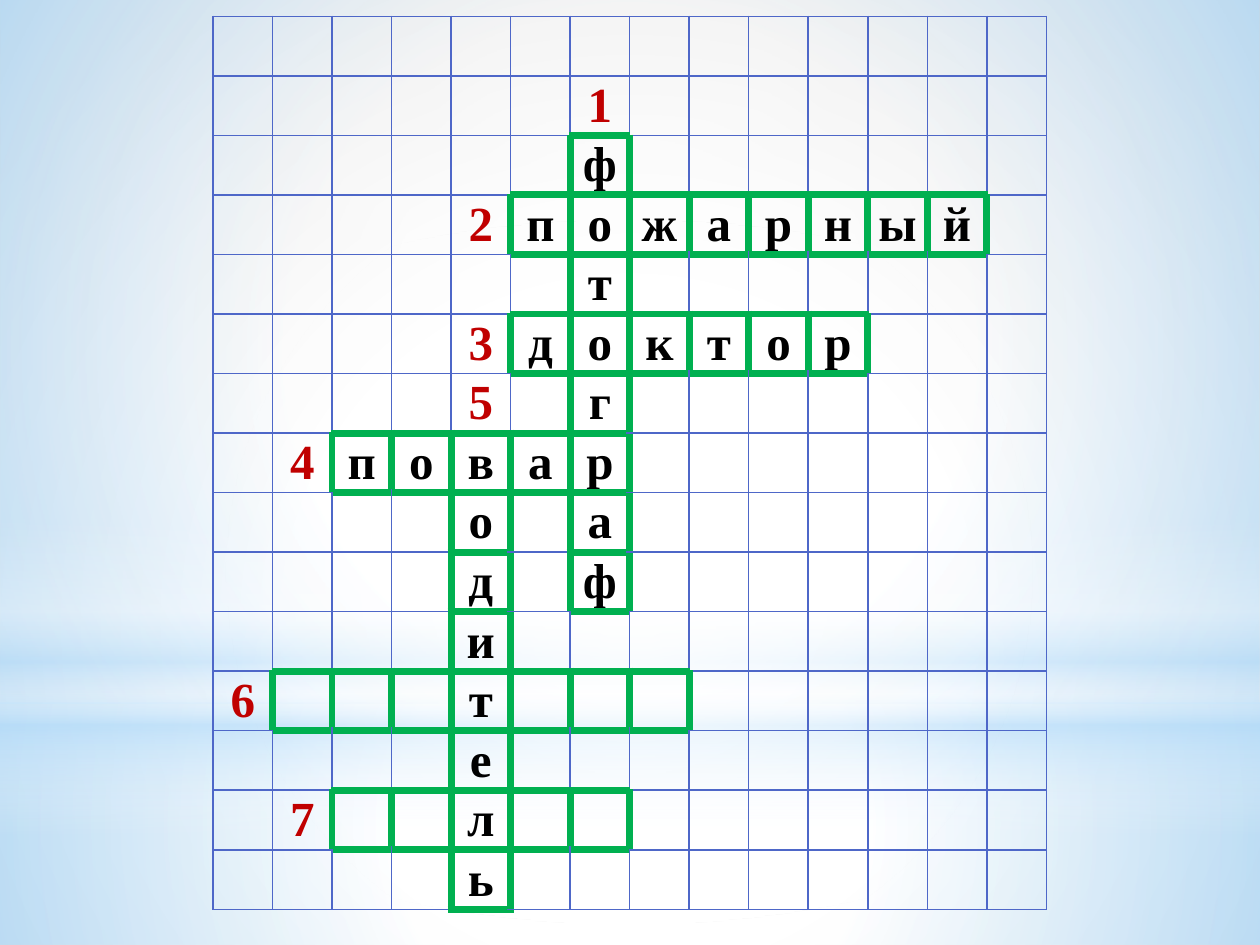
from dataclasses import dataclass

import lxml.etree
import pptx
import pptx.dml.color
import pptx.enum.shapes
import pptx.enum.text
import pptx.oxml.ns
import pptx.util

SLIDE_WIDTH, SLIDE_HEIGHT = 10, 7.5
COLUMNS, ROWS, CELL = 14, 15, 0.4725
TABLE_LEFT, TABLE_TOP = 1.69, 0.13
THIN, THICK = 1, 4.5
FONT, FONT_SIZE = "Times New Roman", 28
COLORS = {"white": "FFFFFF", "gray": "D1D1D1", "sky": "B4DCFA", "grid": "4E67C8",
          "word": "00B050", "number": "C00000", "letter": "000000"}
ACROSS, DOWN = (0, 1), (1, 0)
SIDES = {"lnL": (0, -1), "lnR": (0, 1), "lnT": (-1, 0), "lnB": (1, 0)}
SHAPES = pptx.enum.shapes.MSO_SHAPE


@dataclass
class Word:
    """A crossword entry; its number stands just before the first cell."""
    number: int
    row: int
    column: int
    step: tuple[int, int]
    length: int
    letters: str = ""

    def cell(self, index: int) -> tuple[int, int]:
        return self.row + index * self.step[0], self.column + index * self.step[1]


@dataclass
class Gradient:
    """Stops are (position, colour, opacity) in percent; center is left, top, right, bottom."""
    stops: list[tuple[int, str, int]]
    center: tuple[int, int, int, int] | None = (50, 50, 50, 50)


@dataclass
class Backdrop:
    """A full-width shape; top and height are shares of the slide height."""
    kind: SHAPES
    top: float
    height: float
    gradient: Gradient


WORDS = [
    Word(1, 2, 6, DOWN, 8, "фотограф"),
    Word(2, 3, 5, ACROSS, 8, "пожарный"),
    Word(3, 5, 5, ACROSS, 6, "доктор"),
    Word(4, 7, 2, ACROSS, 5, "повар"),
    Word(5, 7, 4, DOWN, 8, "водитель"),
    Word(6, 11, 1, ACROSS, 7),
    Word(7, 13, 2, ACROSS, 5),
]
BACKGROUND = Gradient([(0, "white", 100), (42, "white", 100), (100, "gray", 100)],
                      (24, 44, 24, 12))
BACKDROPS = [
    Backdrop(SHAPES.RECTANGLE, 0.744, 0.256,
             Gradient([(0, "white", 91), (37, "white", 76), (100, "sky", 79)])),
    Backdrop(SHAPES.RECTANGLE, 0, 0.744,
             Gradient([(0, "white", 89), (48, "white", 62), (100, "sky", 79)])),
    Backdrop(SHAPES.RECTANGLE, 0.55, 0.333,
             Gradient([(0, "white", 0), (29, "white", 30), (45, "sky", 40),
                       (55, "white", 26), (65, "sky", 60), (100, "white", 0)], None)),
    Backdrop(SHAPES.OVAL, 0.233, 0.744,
             Gradient([(0, "white", 100), (56, "white", 0)])),
]


def add_element(parent, tag: str, **attributes):
    return lxml.etree.SubElement(parent, pptx.oxml.ns.qn(tag),
                                 {name: str(value) for name, value in attributes.items()})


def paint_gradient(fill, container, gradient: Gradient) -> None:
    """Fill with a gradient whose stops carry opacity, circular if it has a center."""
    fill.gradient()
    element = container.find(".//" + pptx.oxml.ns.qn("a:gradFill"))
    for child in list(element):
        element.remove(child)
    element.set("rotWithShape", "1")
    stops = add_element(element, "a:gsLst")
    for position, color, opacity in gradient.stops:
        stop = add_element(stops, "a:gs", pos=position * 1000)
        color_element = add_element(stop, "a:srgbClr", val=COLORS[color])
        if opacity < 100:
            add_element(color_element, "a:alpha", val=opacity * 1000)
    if gradient.center:
        circle = add_element(element, "a:path", path="circle")
        sides = {side: share * 1000 for side, share in zip("ltrb", gradient.center)}
        add_element(circle, "a:fillToRect", **sides)
    else:
        add_element(element, "a:lin", ang=90 * 60000, scaled=0)


def add_backdrop(slide, backdrop: Backdrop) -> None:
    shape = slide.shapes.add_shape(
        backdrop.kind, 0, pptx.util.Inches(backdrop.top * SLIDE_HEIGHT),
        pptx.util.Inches(SLIDE_WIDTH), pptx.util.Inches(backdrop.height * SLIDE_HEIGHT))
    shape.shadow.inherit = False
    shape.line.fill.background()
    paint_gradient(shape.fill, shape._element.spPr, backdrop.gradient)


def set_borders(cell, row: int, column: int, word_cells: set[tuple[int, int]]) -> None:
    """Draw a thick side wherever it belongs to a word cell, and a thin one elsewhere."""
    properties = cell._tc.get_or_add_tcPr()
    for tag, (down, right) in SIDES.items():
        thick = bool({(row, column), (row + down, column + right)} & word_cells)
        line = add_element(properties, f"a:{tag}", cap="flat", cmpd="sng", algn="ctr",
                           w=pptx.util.Pt(THICK if thick else THIN))
        fill = add_element(line, "a:solidFill")
        add_element(fill, "a:srgbClr", val=COLORS["word" if thick else "grid"])
        add_element(line, "a:prstDash", val="solid")


def write(cell, text: str, color: str) -> None:
    paragraph = cell.text_frame.paragraphs[0]
    paragraph.alignment = pptx.enum.text.PP_ALIGN.CENTER
    run = paragraph.add_run()
    run.text = text
    run.font.name = FONT
    run.font.size = pptx.util.Pt(FONT_SIZE)
    run.font.bold = True
    run.font.color.rgb = pptx.dml.color.RGBColor.from_string(COLORS[color])


def add_crossword(slide, words: list[Word]) -> None:
    word_cells = {word.cell(index) for word in words for index in range(word.length)}
    entries = {word.cell(-1): (str(word.number), "number") for word in words}
    for word in words:
        for index, letter in enumerate(word.letters):
            entries[word.cell(index)] = (letter, "letter")

    size = pptx.util.Inches(CELL)
    table = slide.shapes.add_table(
        ROWS, COLUMNS, pptx.util.Inches(TABLE_LEFT), pptx.util.Inches(TABLE_TOP),
        size * COLUMNS, size * ROWS).table
    table.first_row = table.horz_banding = False
    for column in table.columns:
        column.width = size
    for row in table.rows:
        row.height = size
    for row in range(ROWS):
        for column in range(COLUMNS):
            cell = table.cell(row, column)
            cell.margin_left = cell.margin_right = cell.margin_top = cell.margin_bottom = 0
            cell.vertical_anchor = pptx.enum.text.MSO_ANCHOR.MIDDLE
            set_borders(cell, row, column, word_cells)
            cell.fill.background()
            if (row, column) in entries:
                write(cell, *entries[row, column])


def main() -> None:
    presentation = pptx.Presentation()
    presentation.slide_width = pptx.util.Inches(SLIDE_WIDTH)
    presentation.slide_height = pptx.util.Inches(SLIDE_HEIGHT)
    slide = presentation.slides.add_slide(presentation.slide_layouts[6])
    paint_gradient(slide.background.fill, slide._element, BACKGROUND)
    for backdrop in BACKDROPS:
        add_backdrop(slide, backdrop)
    add_crossword(slide, WORDS)
    presentation.save("out.pptx")


if __name__ == "__main__":
    main()
